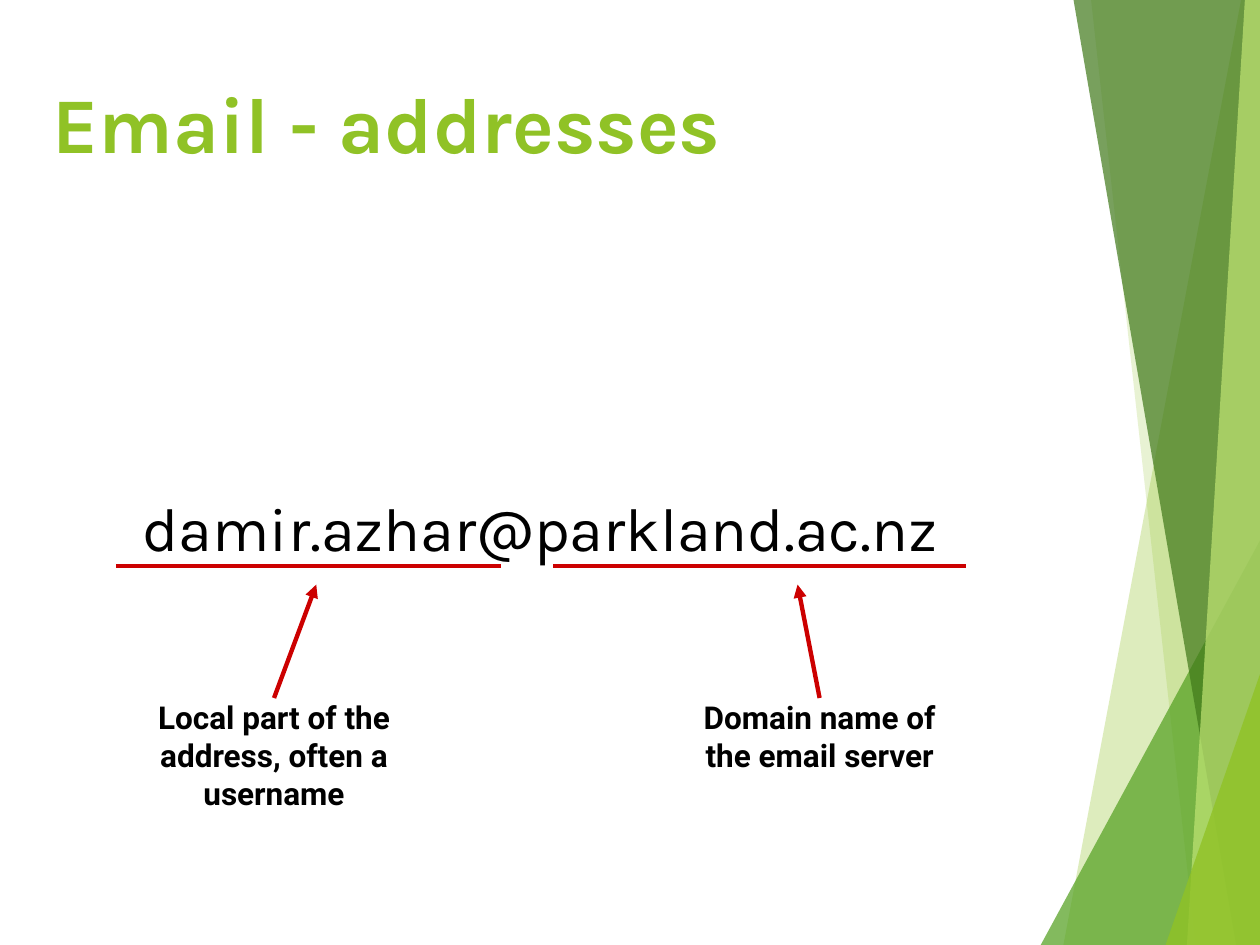
from lxml.etree import SubElement
from pptx import Presentation
from pptx.dml.color import RGBColor
from pptx.enum.shapes import MSO_CONNECTOR
from pptx.enum.text import MSO_ANCHOR, PP_ALIGN
from pptx.oxml.ns import qn
from pptx.util import Inches, Pt

COLOURS = {
    "green": "90C226",
    "leaf": "54A021",
    "forest": "3F7819",
    "lime": "C0E474",
    "black": "000000",
    "red": "CC0000",
}

FACETS = [
    ("green", 30, [(9.85, 0), (8.44, 7.5), (10, 7.5), (10, 0)]),
    ("green", 20, [(8.66, 0), (9.49, 7.5), (10, 7.5), (10, 0)]),
    ("leaf", 72, [(8.26, 7.5), (10, 4.29), (10, 7.5)]),
    ("forest", 70, [(8.52, 0), (9.81, 7.5), (10, 7.5), (10, 0)]),
    ("lime", 70, [(9.88, 0), (9.42, 7.5), (10, 7.5), (10, 0)]),
    ("green", 80, [(9.25, 7.5), (10, 5.35), (10, 7.5)]),
]

ADDRESS_PARTS = [
    ("Local part of the address, often a username", 1.2, 2.51, (0.92, 3.98)),
    ("Domain name of the email server", 5.53, 6.33, (4.39, 7.67)),
]

LABEL_TOP = 5.54
LABEL_WIDTH = 1.95
ARROW_TIP = 4.64
UNDERLINE_TOP = 4.49


def rgb(name):
    """Return the named colour."""
    return RGBColor.from_string(COLOURS[name])


def add_facet(page, colour, opacity, points):
    """Draw one translucent polygon of the side decoration."""
    corners = [(Inches(x), Inches(y)) for x, y in points]
    builder = page.shapes.build_freeform(*corners[0])
    builder.add_line_segments(corners[1:], close=True)
    facet = builder.convert_to_shape()
    facet.shadow.inherit = False
    facet.line.fill.background()
    facet.fill.solid()
    facet.fill.fore_color.rgb = rgb(colour)
    tint = facet.fill._xPr.find(qn("a:solidFill"))[0]
    SubElement(tint, qn("a:alpha"), val=str(opacity * 1000))


def add_text(page, text, place, font, size, colour="black", bold=False,
             align=PP_ALIGN.CENTER, anchor=MSO_ANCHOR.MIDDLE, space_before=0):
    """Add a wrapped text box holding one formatted paragraph."""
    box = page.shapes.add_textbox(*map(Inches, place))
    frame = box.text_frame
    frame.word_wrap = True
    frame.vertical_anchor = anchor
    frame.text = text
    para = frame.paragraphs[0]
    para.alignment = align
    para.space_before = Pt(space_before)
    span = para.runs[0]
    span.font.name = font
    span.font.size = Pt(size)
    span.font.bold = bold
    span.font.color.rgb = rgb(colour)
    return box


def add_label(page, text, left):
    """Add a bold caption without inner margins."""
    box = add_text(page, text, (left, LABEL_TOP, LABEL_WIDTH, 1.26), "Roboto", 18,
                   bold=True, anchor=MSO_ANCHOR.TOP)
    frame = box.text_frame
    frame.margin_left = frame.margin_right = 0
    frame.margin_top = frame.margin_bottom = 0
    return box


def add_line(page, start, end):
    """Add a red straight connector."""
    line = page.shapes.add_connector(MSO_CONNECTOR.STRAIGHT, *map(Inches, start + end))
    line.line.color.rgb = rgb("red")
    line.line.width = Pt(2.5)
    SubElement(line._element.spPr, qn("a:effectLst"))
    return line


def add_arrow(page, label, start, end):
    """Add an arrow that leaves the top of a label."""
    arrow = add_line(page, start, end)
    arrow.begin_connect(label, 0)
    SubElement(arrow.line._get_or_add_ln(), qn("a:tailEnd"), type="triangle")


def main():
    """Build the slide and save it."""
    deck = Presentation()
    deck.slide_width, deck.slide_height = Inches(10), Inches(7.5)
    page = deck.slides.add_slide(deck.slide_layouts[6])
    for facet in FACETS:
        add_facet(page, *facet)
    add_text(page, "Email - addresses", (0.32, 0.37, 7.94, 1.19), "Karla", 45,
             "green", bold=True, align=PP_ALIGN.LEFT)
    add_text(page, "damir.azhar@parkland.ac.nz", (0.32, 1.56, 7.94, 5.24), "Karla", 35,
             space_before=20)
    for text, left, tip, (start, end) in ADDRESS_PARTS:
        label = add_label(page, text, left)
        add_arrow(page, label, (left + LABEL_WIDTH / 2, LABEL_TOP), (tip, ARROW_TIP))
        add_line(page, (start, UNDERLINE_TOP), (end, UNDERLINE_TOP))
    deck.save("out.pptx")


if __name__ == "__main__":
    main()
